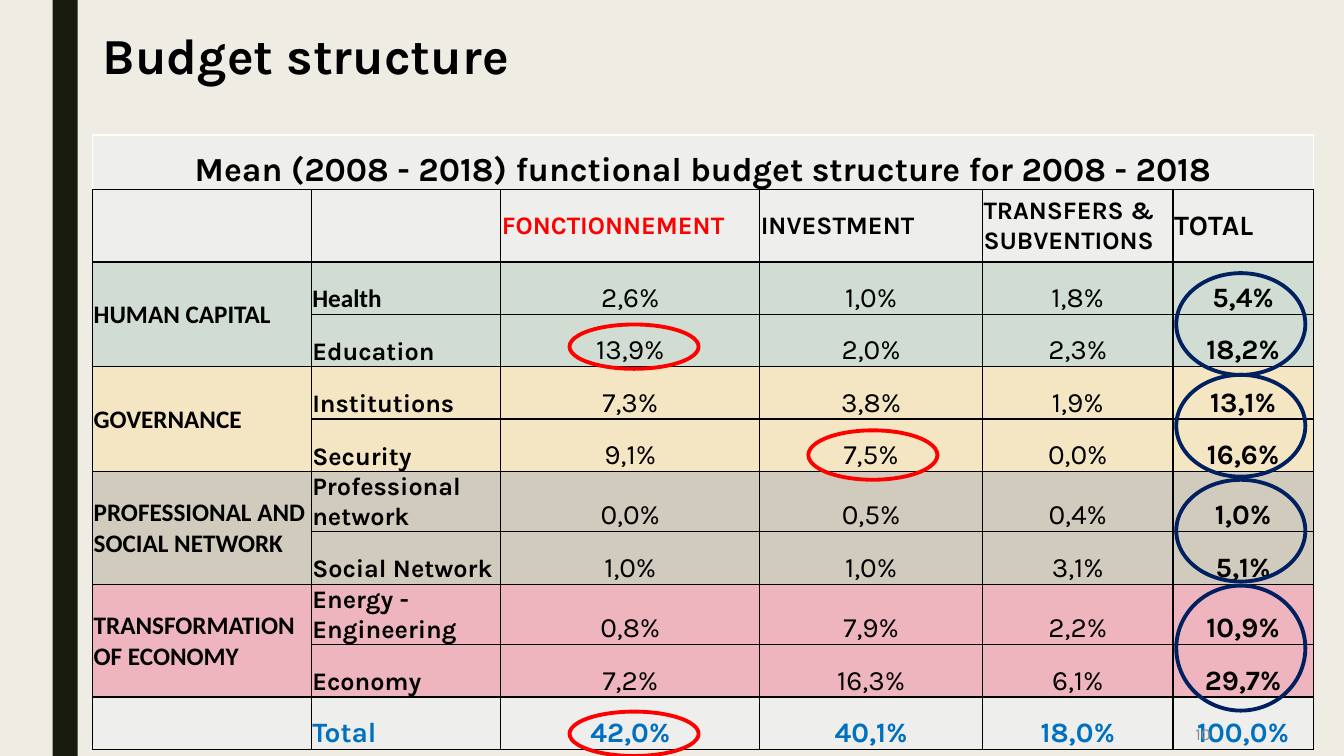
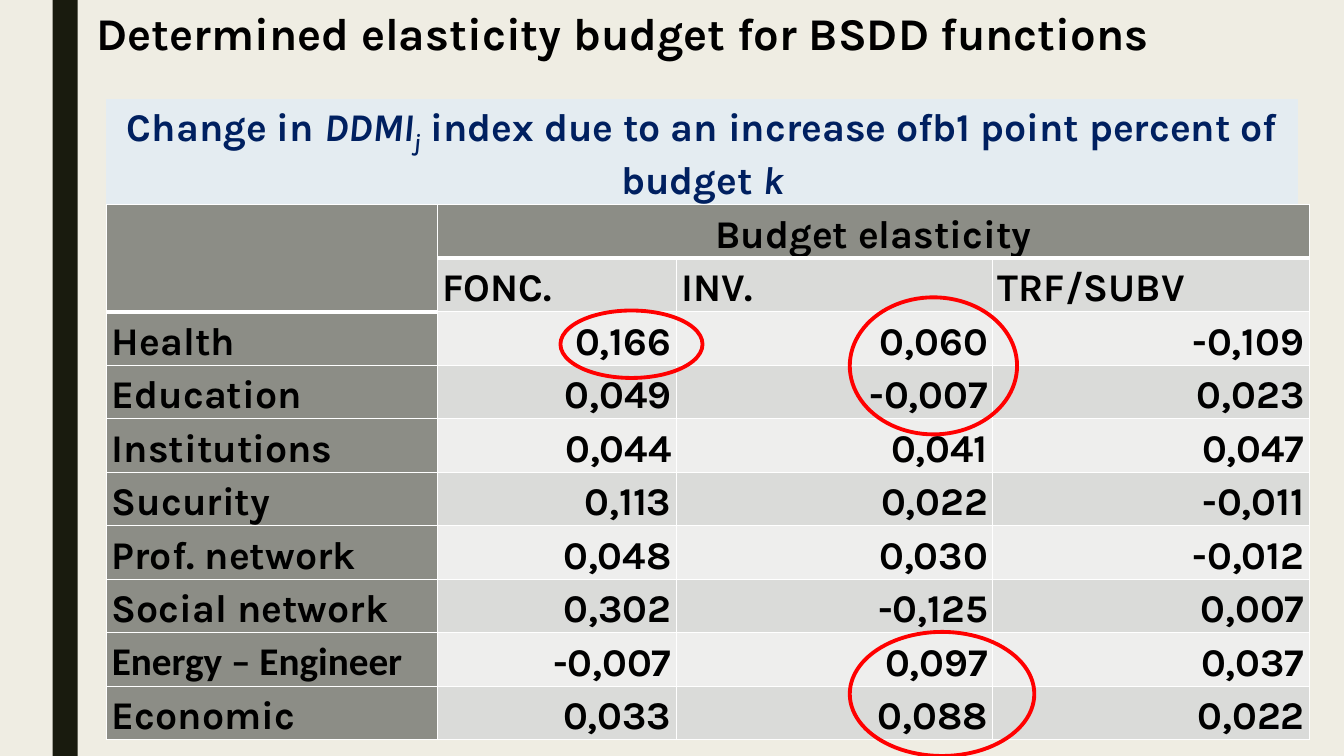
from dataclasses import dataclass, field
from typing import Any, NamedTuple

from lxml.etree import SubElement as Sub
from pptx import Presentation
from pptx.dml.color import RGBColor
from pptx.enum.shapes import MSO_SHAPE as Form
from pptx.enum.text import MSO_ANCHOR as Anchor, MSO_AUTO_SIZE as Auto, PP_ALIGN as Align
from pptx.oxml.ns import qn
from pptx.util import Pt

CREAM = RGBColor(0xEF, 0xED, 0xE3)
DARK = RGBColor(0x19, 0x1B, 0x0E)
BLACK = RGBColor(0, 0, 0)
WHITE = RGBColor(0xFF, 0xFF, 0xFF)
RED = RGBColor(0xFF, 0, 0)
NAVY = RGBColor(0, 0x20, 0x60)
BLUE = RGBColor(0, 0x70, 0xC0)
PALE = RGBColor(0xEE, 0xEE, 0xED)
SILVER = RGBColor(0xDA, 0xDB, 0xD9)
STONE = RGBColor(0x8C, 0x8D, 0x86)
GREY = RGBColor(0x8C, 0x8C, 0x8C)
ICE = RGBColor(0xE4, 0xEC, 0xF1)
GREEN = RGBColor(0xD1, 0xDD, 0xD2)
SAND = RGBColor(0xF5, 0xE6, 0xC3)
TAUPE = RGBColor(0xD1, 0xCB, 0xBE)
PINK = RGBColor(0xEE, 0xB5, 0xBF)
KARLA, PLAIN = "Karla", "Calibri"


class Box(NamedTuple):
    left: float
    top: float
    width: float
    height: float

    def points(self) -> tuple:
        return tuple(Pt(side) for side in self)


class Edge(NamedTuple):
    hue: RGBColor
    width: float


class Ring(NamedTuple):
    box: Box
    hue: RGBColor


class Group(NamedTuple):
    label: str
    fill: RGBColor
    rows: list


@dataclass
class Cell:
    text: str = ""
    fill: RGBColor = PALE
    size: float = 20
    bold: bool = True
    hue: RGBColor = BLACK
    font: str = KARLA
    align: Any = Align.LEFT
    anchor: Any = Anchor.BOTTOM
    edges: dict = field(default_factory=dict)


@dataclass
class Grid:
    left: float
    top: float
    cols: list
    rows: list
    cells: list
    spans: list
    edge: Edge
    inset: dict
    space: float = 1.0


def apply(target: Any, values: dict) -> None:
    for name, value in values.items():
        setattr(target, name, value)


def write(para: Any, text: str, hue: RGBColor, size: float, **more: Any) -> Any:
    run = para.add_run()
    run.text = text
    apply(run.font, {"name": KARLA, "size": Pt(size), "bold": True, **more})
    run.font.color.rgb = hue
    return run


def shape(slide: Any, form: Any, box: Box, fill: RGBColor | None, edge: Edge | None) -> Any:
    item = slide.shapes.add_shape(form, *box.points())
    item.shadow.inherit = False
    if fill is None:
        item.fill.background()
    else:
        item.fill.solid()
        item.fill.fore_color.rgb = fill
    if edge is None:
        item.line.fill.background()
    else:
        item.line.color.rgb = edge.hue
        item.line.width = Pt(edge.width)
    return item


def ring(slide: Any, item: Ring) -> None:
    shape(slide, Form.OVAL, item.box, None, Edge(item.hue, 2.75))


def title(slide: Any, text: str, box: Box, size: float) -> None:
    head = slide.shapes.title
    names = ("left", "top", "width", "height")
    apply(head, dict(zip(names, box.points())))
    frame = head.text_frame
    apply(frame, {"word_wrap": True, "auto_size": Auto.NONE, "vertical_anchor": Anchor.TOP})
    para = frame.paragraphs[0]
    apply(para, {"alignment": Align.LEFT, "line_spacing": 0.89})
    write(para, text, BLACK, size)


def border(cell: Any, edges: dict) -> None:
    props = cell._tc.get_or_add_tcPr()
    for side in "LRTB":
        edge = edges[side]
        line = Sub(props, qn(f"a:ln{side}"), w=str(Pt(edge.width)))
        Sub(Sub(line, qn("a:solidFill")), qn("a:srgbClr"), val=str(edge.hue))


def table(slide: Any, grid: Grid) -> None:
    box = Box(grid.left, grid.top, sum(grid.cols), sum(grid.rows))
    item = slide.shapes.add_table(len(grid.rows), len(grid.cols), *box.points()).table
    apply(item, {"first_row": False, "horz_banding": False})
    for col, width in zip(item.columns, grid.cols):
        col.width = Pt(width)
    for row, height in zip(item.rows, grid.rows):
        row.height = Pt(height)
    for r, line in enumerate(grid.cells):
        for c, data in enumerate(line):
            cell = item.cell(r, c)
            border(cell, {**dict.fromkeys("LRTB", grid.edge), **data.edges})
            cell.fill.solid()
            cell.fill.fore_color.rgb = data.fill
            apply(cell, {"vertical_anchor": data.anchor, **grid.inset})
            para = cell.text_frame.paragraphs[0]
            apply(para, {"alignment": data.align, "line_spacing": grid.space})
            if data.text:
                write(para, data.text, data.hue, data.size, bold=data.bold, name=data.font)
    for r, c, last, end in grid.spans:
        item.cell(r, c).merge(item.cell(last, end))


GROUPS = [
    Group("HUMAN CAPITAL", GREEN, [
        ("Health", "2,6%", "1,0%", "1,8%", "5,4%"),
        ("Education", "13,9%", "2,0%", "2,3%", "18,2%")]),
    Group("GOVERNANCE", SAND, [
        ("Institutions", "7,3%", "3,8%", "1,9%", "13,1%"),
        ("Security", "9,1%", "7,5%", "0,0%", "16,6%")]),
    Group("PROFESSIONAL AND SOCIAL NETWORK", TAUPE, [
        ("Professional network", "0,0%", "0,5%", "0,4%", "1,0%"),
        ("Social Network", "1,0%", "1,0%", "3,1%", "5,1%")]),
    Group("TRANSFORMATION OF ECONOMY", PINK, [
        ("Energy - Engineering", "0,8%", "7,9%", "2,2%", "10,9%"),
        ("Economy", "7,2%", "16,3%", "6,1%", "29,7%")]),
]
SUMS = ("42,0%", "40,1%", "18,0%", "100,0%")
HEADS = [("FONCTIONNEMENT", 18, RED), ("INVESTMENT", 18, BLACK),
         ("TRANSFERS & SUBVENTIONS", 18, BLACK), ("TOTAL", 20, BLACK)]
RATES = [
    ("Health", "0,166", "0,060", "-0,109"),
    ("Education", "0,049", "-0,007", "0,023"),
    ("Institutions", "0,044", "0,041", "0,047"),
    ("Sucurity", "0,113", "0,022", "-0,011"),
    ("Prof. network", "0,048", "0,030", "-0,012"),
    ("Social network", "0,302", "-0,125", "0,007"),
    ("Energy – Engineer", "-0,007", "0,097", "0,037"),
    ("Economic", "0,033", "0,088", "0,022"),
]


def budget_grid() -> Grid:
    white = dict.fromkeys("LTR", Edge(WHITE, 1))
    top = Cell("Mean (2008 - 2018) functional budget structure for 2008 - 2018",
               size=24, align=Align.CENTER, edges=white)
    cells = [[top] + [Cell(edges=white) for _ in range(5)],
             [Cell(), Cell()] + [Cell(text, size=size, hue=hue, anchor=Anchor.MIDDLE)
                                 for text, size, hue in HEADS]]
    spans = [(0, 0, 0, 5)]
    for label, fill, rows in GROUPS:
        first = len(cells)
        spans.append((first, 0, first + 1, 0))
        for k, (name, *rates) in enumerate(rows):
            font = PLAIN if name == "Health" else KARLA
            cells.append(
                [Cell("" if k else label, fill, 18, font=PLAIN, anchor=Anchor.MIDDLE),
                 Cell(name, fill, 18, font=font)]
                + [Cell(rate, fill, bold=rate is rates[-1], align=Align.CENTER)
                   for rate in rates])
    cells.append([Cell(), Cell("Total", hue=BLUE)]
                 + [Cell(text, hue=BLUE, align=Align.CENTER) for text in SUMS])
    low, high = 37.4, 43.2
    return Grid(66.2, 96.5, [156.2, 135.4, 185, 159.1, 136.1, 100.1],
                [38.9, 51.8] + [low] * 4 + [high, low] * 2 + [low],
                cells, spans, Edge(BLACK, 1),
                {"margin_left": Pt(0.72), "margin_right": Pt(0.72),
                 "margin_top": Pt(0.72), "margin_bottom": 0})


def rate_grid() -> Grid:
    thick = {"B": Edge(WHITE, 3)}
    cells = [[Cell(fill=STONE, edges=thick),
              Cell("Budget elasticity", STONE, 28, align=Align.CENTER, edges=thick)]
             + [Cell(fill=STONE, edges=thick) for _ in range(2)],
             [Cell(fill=STONE, edges=thick)]
             + [Cell(text, SILVER, 28) for text in ("FONC.", "INV.", "TRF/SUBV")]]
    for k, (name, *rates) in enumerate(RATES):
        font = PLAIN if name.startswith("Energy") else KARLA
        fill = SILVER if k % 2 else PALE
        cells.append([Cell(name, STONE, 28, font=font)]
                     + [Cell(rate, fill, 28, align=Align.RIGHT) for rate in rates])
    return Grid(76.3, 146.2, [236.2, 170.6, 226.1, 226.1], [38.23] * len(cells),
                cells, [(0, 0, 1, 0), (0, 1, 0, 3)], Edge(WHITE, 1),
                {"margin_left": Pt(3.6), "margin_right": Pt(3.6),
                 "margin_top": 0, "margin_bottom": 0}, 1.07)


def budget(slide: Any) -> None:
    title(slide, "Budget structure", Box(66.2, 18.7, 774, 46.1), 36)
    table(slide, budget_grid())
    note = slide.shapes.add_textbox(*Box(745.9, 508.3, 126, 31.7).points())
    apply(note.text_frame, {"word_wrap": True, "vertical_anchor": Anchor.MIDDLE})
    para = note.text_frame.paragraphs[0]
    para.alignment = Align.RIGHT
    write(para, "10", GREY, 12, bold=False)
    for left, top, height in ((406.8, 508.3, 31.7), (406.8, 231.8, 31.7), (577.4, 307.4, 35.3)):
        ring(slide, Ring(Box(left, top, 92.2, height), RED))
    for top, height in ((195.1, 72.7), (267.8, 72.7), (342.7, 72.7), (418.3, 89.3)):
        ring(slide, Ring(Box(840.2, top, 92.2, height), NAVY))


def rates(slide: Any) -> None:
    title(slide, "Determined elasticity budget for BSDD functions", Box(61.9, 5, 778.3, 36), 32.4)
    banner = shape(slide, Form.RECTANGLE, Box(76.3, 71.3, 850.3, 74.9), ICE, Edge(ICE, 0.75))
    apply(banner.text_frame, {"word_wrap": True, "vertical_anchor": Anchor.MIDDLE})
    para = banner.text_frame.paragraphs[0]
    para.alignment = Align.CENTER
    for text, slant, base in (("Change in ", False, 0), ("DDMI", True, 0), ("j", True, -25000),
                              (" index due to an increase ofb1 point percent of budget ", False, 0),
                              ("k", True, 0)):
        run = write(para, text, NAVY, 28, italic=slant)
        if base:
            run.font._element.set("baseline", str(base))
    table(slide, rate_grid())
    for box in (Box(607, 451.4, 131.8, 88.6), Box(607, 212.4, 119.5, 97.9),
                Box(400.3, 221.8, 101.5, 48.2)):
        ring(slide, Ring(box, RED))


def main() -> None:
    deck = Presentation()
    apply(deck, {"slide_width": Pt(960), "slide_height": Pt(540)})
    master, layout = deck.slide_master, deck.slide_layouts[5]
    master.background.fill.solid()
    master.background.fill.fore_color.rgb = CREAM
    first, second = (deck.slides.add_slide(layout) for _ in range(2))
    band = shape(first, Form.RECTANGLE, Box(37.5, 0, 18, 540), DARK, None)
    layout.shapes._spTree.append(band._element)
    budget(first)
    rates(second)
    deck.save("out.pptx")


if __name__ == "__main__":
    main()
